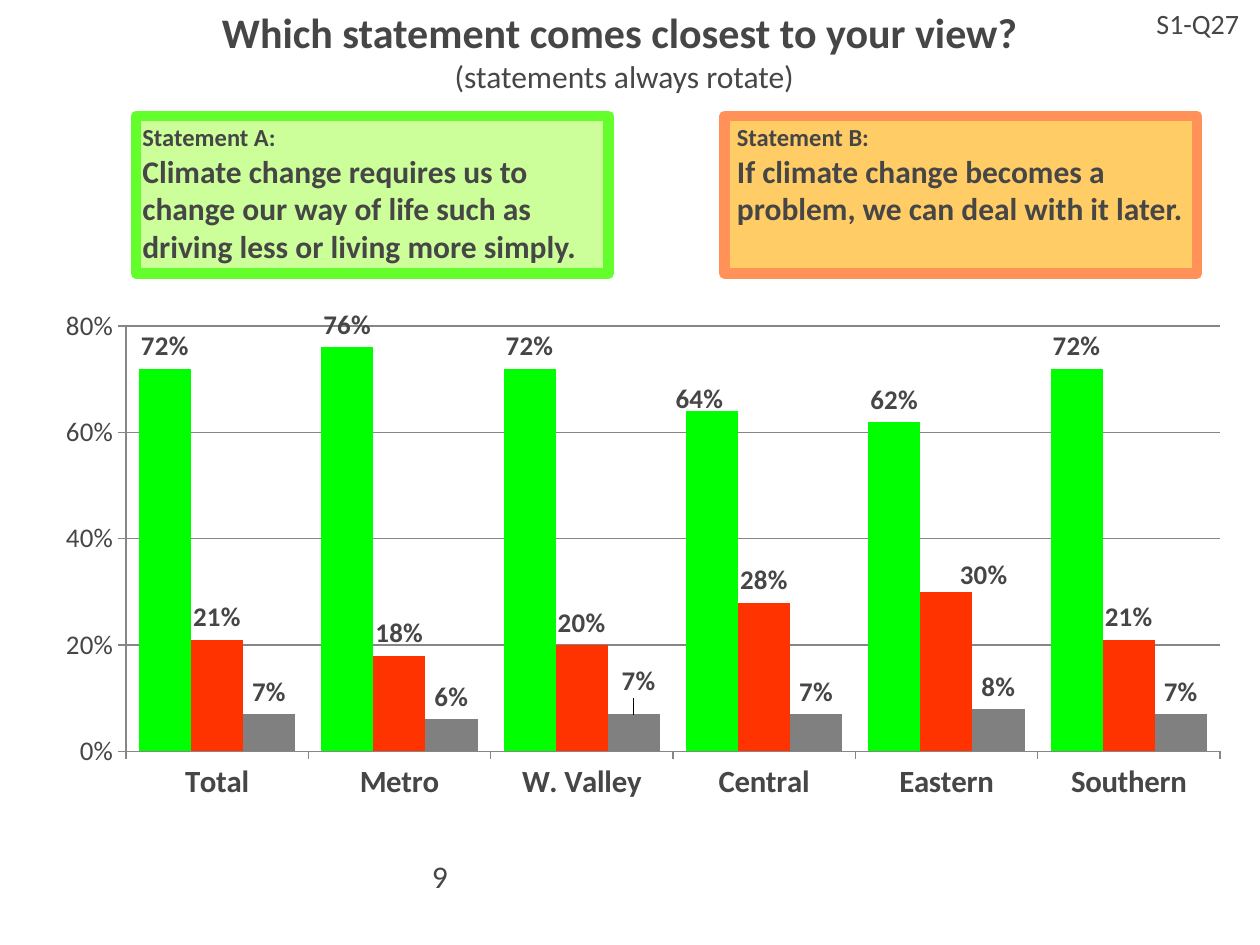
from lxml import etree
from pptx import Presentation
from pptx.chart.data import CategoryChartData
from pptx.dml.color import RGBColor
from pptx.enum.chart import XL_CHART_TYPE, XL_LABEL_POSITION, XL_TICK_MARK
from pptx.enum.shapes import MSO_SHAPE
from pptx.enum.text import MSO_ANCHOR, PP_ALIGN
from pptx.oxml.ns import qn
from pptx.util import Inches, Pt

FONT = "Calibri"
INK = "464646"
AXIS_GRAY = "868686"
PERCENT = "0%"
COLUMNS = XL_CHART_TYPE.COLUMN_CLUSTERED
OUTSIDE_END = XL_LABEL_POSITION.OUTSIDE_END
TICK_OUT = XL_TICK_MARK.OUTSIDE
RECTANGLE = MSO_SHAPE.RECTANGLE
TOP = MSO_ANCHOR.TOP
LEFT, CENTER = PP_ALIGN.LEFT, PP_ALIGN.CENTER

REGIONS = ["Total", "Metro", "W. Valley", "Central", "Eastern", "Southern"]
ANSWERS = [
    ("Series 1", [0.72, 0.76, 0.72, 0.64, 0.62, 0.72], "00FF00"),
    ("Series 2", [0.21, 0.18, 0.20, 0.28, 0.30, 0.21], "FF3300"),
    ("Series 3", [0.07, 0.06, 0.07, 0.07, 0.08, 0.07], "808080"),
]
MOVED_LABELS = [(0, 3, -0.01, 0.02), (1, 4, 0.03, 0.01), (2, 2, 0.004, -0.02)]


def rgb(color):
    return RGBColor.from_string(color)


def style_font(font, size, bold=False):
    font.name = FONT
    font.size = Pt(size)
    font.bold = bold
    font.color.rgb = rgb(INK)


def write(frame, text, size=18, bold=False, align=LEFT, first=True):
    paragraph = frame.paragraphs[0] if first else frame.add_paragraph()
    paragraph.alignment = align
    run = paragraph.add_run()
    run.text = text
    style_font(run.font, size, bold)


def add_text_area(slide, left, top, width, height):
    area = slide.shapes.add_textbox(
        Inches(left), Inches(top), Inches(width), Inches(height))
    area.text_frame.word_wrap = True
    return area.text_frame


def add_statement(slide, left, heading, statement, fill, border, inset):
    card = slide.shapes.add_shape(
        RECTANGLE, Inches(left), Inches(0.92), Inches(3.75), Inches(1.25))
    card.shadow.inherit = False
    card.fill.solid()
    card.fill.fore_color.rgb = rgb(fill)
    card.line.color.rgb = rgb(border)
    card.line.width = Pt(6)
    frame = card.text_frame
    frame.word_wrap = True
    frame.vertical_anchor = TOP
    frame.margin_left = frame.margin_right = Inches(inset)
    frame.margin_top = frame.margin_bottom = Inches(0.05)
    write(frame, heading, size=14, bold=True)
    write(frame, statement, bold=True, first=False)


def make_layout(**settings):
    layout = etree.Element(qn("c:layout"))
    manual = etree.SubElement(layout, qn("c:manualLayout"))
    for tag, value in settings.items():
        etree.SubElement(manual, qn(f"c:{tag}")).set("val", str(value))
    return layout


def place_plot(chart):
    plot_area = chart._chartSpace.chart.plotArea
    for automatic in plot_area.findall(qn("c:layout")):
        plot_area.remove(automatic)
    plot_area.insert(0, make_layout(
        layoutTarget="inner", xMode="edge", yMode="edge",
        x=0.095, y=0.047, w=0.878, h=0.8))


def move_label(series, index, dx, dy):
    label = series.points[index].data_label
    label.position = OUTSIDE_END
    style_font(label.font, 15.4, True)
    labels = series._element.find(qn("c:dLbls"))
    labels.find(qn("c:dLbl")).insert(1, make_layout(x=dx, y=dy))


def style_axis(axis, size, bold=False):
    style_font(axis.tick_labels.font, size, bold)
    axis.major_tick_mark = TICK_OUT
    axis.format.line.color.rgb = rgb(AXIS_GRAY)


def add_answer_chart(slide):
    data = CategoryChartData(number_format=PERCENT)
    data.categories = REGIONS
    for name, shares, _ in ANSWERS:
        data.add_series(name, shares)
    chart = slide.shapes.add_chart(
        COLUMNS, Inches(0.06), Inches(2.39), Inches(9.89), Inches(4.22), data).chart
    style_font(chart.font, 19.8)
    chart.has_legend = False
    chart.has_title = False
    plot = chart.plots[0]
    plot.gap_width = 50
    plot.overlap = 0
    plot.vary_by_categories = False
    for series, (_, _, color) in zip(plot.series, ANSWERS):
        series.format.fill.solid()
        series.format.fill.fore_color.rgb = rgb(color)
        labels = series.data_labels
        labels.show_value = True
        labels.number_format = PERCENT
        labels.number_format_is_linked = False
        labels.position = OUTSIDE_END
        style_font(labels.font, 15.4, True)
    for series_index, region_index, dx, dy in MOVED_LABELS:
        move_label(plot.series[series_index], region_index, dx, dy)
    style_axis(chart.category_axis, 17.6, True)
    shares_axis = chart.value_axis
    style_axis(shares_axis, 15.4)
    shares_axis.minimum_scale = 0
    shares_axis.maximum_scale = 0.8
    shares_axis.major_unit = 0.2
    shares_axis.tick_labels.number_format = PERCENT
    shares_axis.tick_labels.number_format_is_linked = False
    shares_axis.major_gridlines.format.line.color.rgb = rgb(AXIS_GRAY)
    place_plot(chart)


def main():
    deck = Presentation()
    deck.slide_width, deck.slide_height = Inches(10), Inches(7.5)
    slide = deck.slides.add_slide(deck.slide_layouts[6])
    write(add_text_area(slide, 3.33, 6.75, 0.58, 0.47), "9")
    add_answer_chart(slide)
    add_statement(
        slide, 5.75, "Statement B:",
        "If climate change becomes a problem, we can deal with it later.",
        "FFCC66", "FF9159", 0.1)
    add_statement(
        slide, 1.08, "Statement A:",
        "Climate change requires us to change our way of life such as "
        "driving less or living more simply.",
        "CCFF99", "63FE2C", 0.05)
    heading = add_text_area(slide, 0.83, 0, 8.25, 0.91)
    write(heading, "Which statement comes closest to your view? ",
          size=24, bold=True, align=CENTER)
    write(heading, "(statements always rotate)", align=CENTER, first=False)
    write(add_text_area(slide, 9.08, 0, 0.92, 0.37), "S1-Q27", size=16)
    deck.save("out.pptx")


if __name__ == "__main__":
    main()
